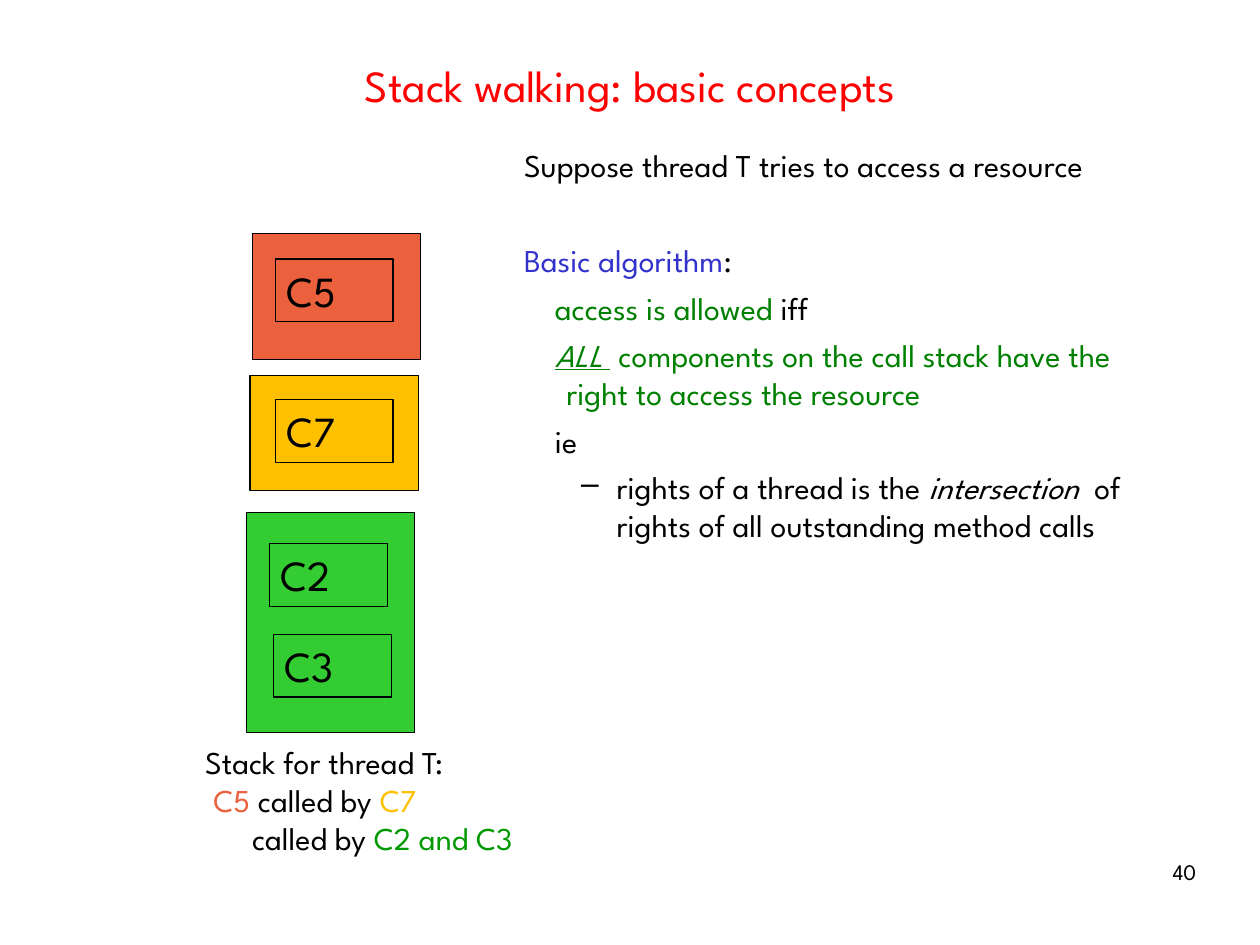
from lxml import etree
from pptx import Presentation
from pptx.dml.color import RGBColor
from pptx.enum.shapes import MSO_SHAPE
from pptx.enum.text import MSO_ANCHOR, PP_ALIGN
from pptx.oxml.ns import qn
from pptx.util import Inches, Mm, Pt

RECTANGLE = MSO_SHAPE.RECTANGLE
TOP, MIDDLE = MSO_ANCHOR.TOP, MSO_ANCHOR.MIDDLE
LEFT, CENTER, RIGHT = PP_ALIGN.LEFT, PP_ALIGN.CENTER, PP_ALIGN.RIGHT

BLACK = RGBColor(0x00, 0x00, 0x00)
RED = RGBColor(0xFF, 0x00, 0x00)
BLUE = RGBColor(0x33, 0x33, 0xCC)
GREEN = RGBColor(0x00, 0x80, 0x00)
CAPTION_GREEN = RGBColor(0x00, 0x99, 0x00)
CORAL = RGBColor(0xEB, 0x61, 0x3D)
AMBER = RGBColor(0xFF, 0xC0, 0x00)
LIME = RGBColor(0x33, 0xCC, 0x33)
FONT = "League Spartan"

deck = Presentation()
deck.slide_width, deck.slide_height = Mm(280), Mm(210)
page = deck.slides.add_slide(deck.slide_layouts[6])

# Lengths are percentages of the slide's width and height
COL, ROW = deck.slide_width / 100, deck.slide_height / 100


def area(left, top, width, height):
    return int(left * COL), int(top * ROW), int(width * COL), int(height * ROW)


def write(box, paragraphs, size=20, align=LEFT, anchor=TOP):
    """Each paragraph is (spans, format); each span is (text, colour[, style])."""
    frame = box.text_frame
    frame.word_wrap = True
    frame.vertical_anchor = anchor
    for number, (spans, form) in enumerate(paragraphs):
        para = frame.add_paragraph() if number else frame.paragraphs[0]
        para.alignment = align
        para.line_spacing = form.get("spacing", 1.0)
        para.space_before = Pt(form.get("before", 0))
        properties = para._p.get_or_add_pPr()
        properties.set("marL", str(Inches(form.get("margin", 0))))
        properties.set("indent", str(Inches(form.get("indent", 0))))
        if "bullet" in form:
            etree.SubElement(properties, qn("a:buChar")).set("char", form["bullet"])
        for text, color, *style in spans:
            span = para.add_run()
            span.text = text
            font = span.font
            font.name, font.size, font.color.rgb = FONT, Pt(size), color
            font.italic = "italic" in style
            font.underline = "underline" in style


# Title
title = page.shapes.add_textbox(*area(7.85, 4.1, 84.3, 9.8))
write(title, [([("Stack walking: basic concepts", RED)], {})],
      size=28, align=CENTER, anchor=MIDDLE)

# Explanation of the algorithm
step = {"before": 6, "margin": 0.37, "indent": -0.1}
body = page.shapes.add_textbox(*area(40.7, 14.8, 52.2, 74.6))
write(body, [
    ([("Suppose thread T tries to access a resource", BLACK)], {"before": 6}),
    ([("Basic algorithm", BLUE), (":", BLACK)], {"before": 36}),
    ([("access is allowed ", GREEN), ("iff", BLACK)], step),
    ([("ALL ", GREEN, "italic", "underline"),
      (" components on the call stack have the right to access the resource", GREEN)],
     step),
    ([("ie", BLACK)], step),
    ([("rights of a thread is the ", BLACK), ("intersection", BLACK, "italic"),
      ("  of rights of all outstanding method calls", BLACK)],
     {"before": 5, "margin": 0.81, "indent": -0.31, "bullet": "–"}),
])

# Slide number
number_box = page.shapes.add_textbox(*area(71.65, 91.05, 23.3, 6.9))
number_frame = number_box.text_frame
number_frame.margin_left = number_frame.margin_right = 0
number_frame.margin_top = number_frame.margin_bottom = 0
write(number_box, [([("40", BLACK)], {"spacing": 0.93})], size=14, align=RIGHT)

# Call stack: coloured domains with their components
domains = [
    (CORAL, 20.05, 24.75, 13.3, [("C5", 21.85, 27.4)]),
    (AMBER, 19.85, 39.75, 12.2, [("C7", 21.85, 42.25)]),
    (LIME, 19.55, 54.2, 23.3, [("C2", 21.4, 57.5), ("C3", 21.7, 67.1)]),
]
for color, left, top, height, components in domains:
    domain = page.shapes.add_shape(RECTANGLE, *area(left, top, 13.35, height))
    domain.fill.solid()
    domain.fill.fore_color.rgb = color
    outlined = [domain]
    for name, name_left, name_top in components:
        component = page.shapes.add_shape(
            RECTANGLE, *area(name_left, name_top, 9.35, 6.65))
        component.fill.background()
        write(component, [([(name, BLACK)], {})], size=27)
        outlined.append(component)
    for shape in outlined:
        shape.shadow.inherit = False
        shape.line.color.rgb = BLACK
        shape.line.width = Pt(0.75)

# Caption below the stack
caption = page.shapes.add_textbox(*area(15.4, 78, 30, 13.4))
write(caption, [
    ([("Stack for thread T:", BLACK)], {}),
    ([("C5 ", CORAL), ("called by ", BLACK), ("C7", AMBER)], {"margin": 0.07}),
    ([("called by ", BLACK), ("C2 and C3", CAPTION_GREEN)], {"margin": 0.41}),
])

deck.save("out.pptx")
